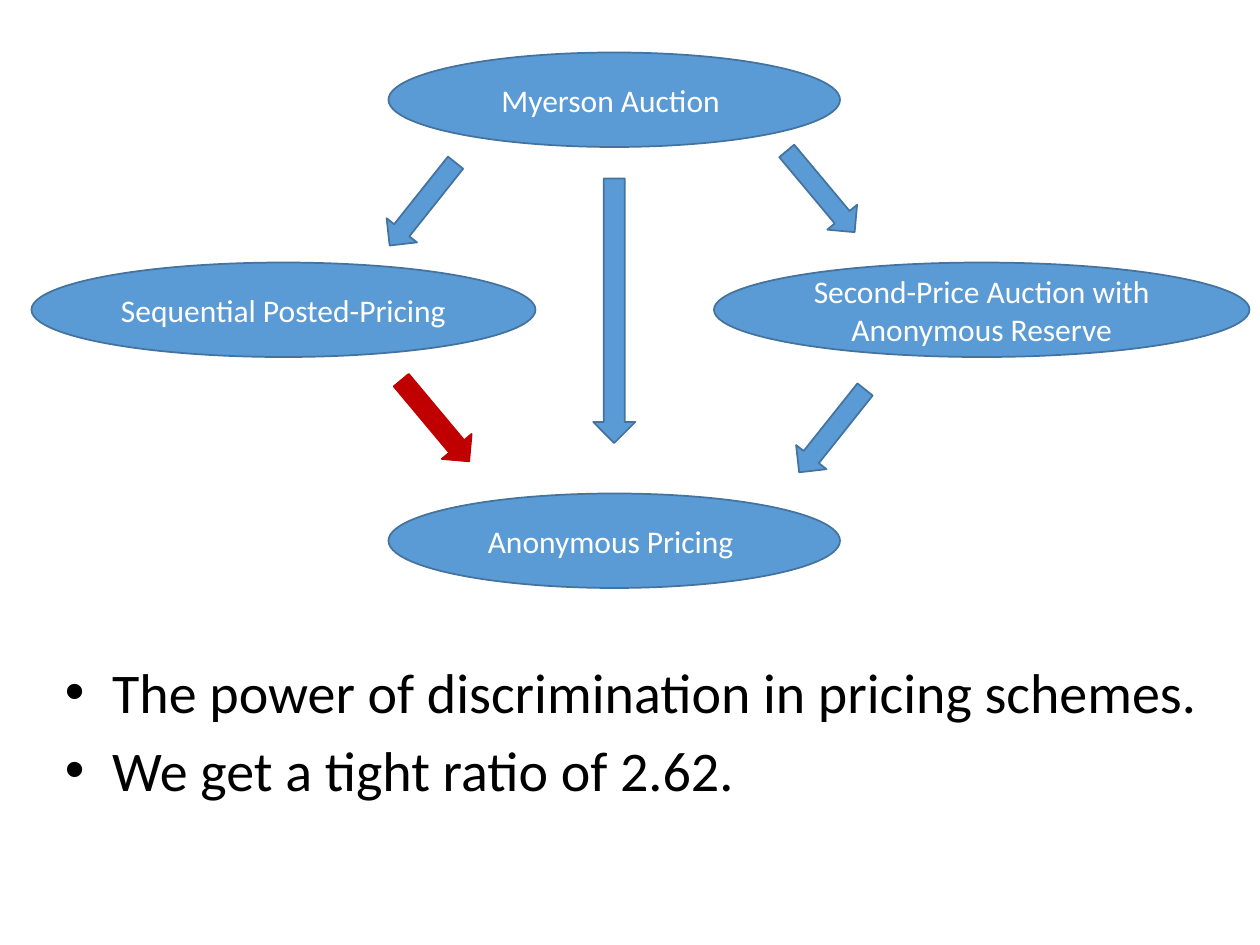
from lxml import etree
from pptx import Presentation
from pptx.dml.color import RGBColor
from pptx.enum.shapes import MSO_SHAPE
from pptx.enum.text import MSO_ANCHOR, PP_ALIGN
from pptx.oxml.ns import qn
from pptx.util import Pt

OVAL, DOWN_ARROW = MSO_SHAPE.OVAL, MSO_SHAPE.DOWN_ARROW
MIDDLE, CENTER = MSO_ANCHOR.MIDDLE, PP_ALIGN.CENTER

BLUE, DARK_BLUE, RED = "5B9BD5", "43739E", "C00000"
WHITE, BLACK = "FFFFFF", "000000"
LEFT_TURN, RIGHT_TURN = 38.5, 320.1

# Text, left, top, width; a trailing space shifts the centred text.
MECHANISMS = [
    ("Myerson Auction ", 222, 30, 258),
    ("Anonymous Pricing ", 222, 282, 258),
    ("Sequential Posted-Pricing", 18, 150, 288),
    ("Second-Price Auction with Anonymous Reserve", 408, 150, 306),
]
MECHANISM_HEIGHT = 54

# Left, top, rotation, fill, line
SHORT_ARROWS = [
    (230.4, 86.4, LEFT_TURN, BLUE, DARK_BLUE),
    (464.4, 216, LEFT_TURN, BLUE, DARK_BLUE),
    (237.6, 210.2, RIGHT_TURN, RED, RED),
    (457.9, 79.2, RIGHT_TURN, BLUE, DARK_BLUE),
]
SHORT_ARROW_SIZE = (22.2, 60.5)

CONCLUSIONS = [
    "The power of discrimination in pricing schemes.",
    "We get a tight ratio of 2.62.",
]


def color(hex_string):
    return RGBColor.from_string(hex_string)


def set_attributes(target, values):
    for name, value in values.items():
        setattr(target, name, value)


def set_font(run, size, hex_string):
    set_attributes(run.font, {"name": "Calibri", "size": Pt(size)})
    run.font.color.rgb = color(hex_string)


def add_outlined_shape(slide, kind, box, fill, line):
    shape = slide.shapes.add_shape(kind, *map(Pt, box))
    shape.shadow.inherit = False
    shape.fill.solid()
    shape.fill.fore_color.rgb = color(fill)
    shape.line.color.rgb = color(line)
    shape.line.width = Pt(1)
    return shape


def add_mechanism(slide, text, box):
    ellipse = add_outlined_shape(slide, OVAL, box, BLUE, DARK_BLUE)
    frame = ellipse.text_frame
    set_attributes(frame, {"word_wrap": True, "vertical_anchor": MIDDLE})
    paragraph = frame.paragraphs[0]
    paragraph.alignment = CENTER
    run = paragraph.add_run()
    run.text = text
    set_font(run, 18, WHITE)


def add_diagram(slide, left, top):
    """Place the mechanisms and the arrows between them, offset from left, top."""
    for text, x, y, width in MECHANISMS:
        add_mechanism(slide, text, (left + x, top + y, width, MECHANISM_HEIGHT))
    add_outlined_shape(slide, DOWN_ARROW, (left + 339, top + 102, 24, 151.2),
                       BLUE, DARK_BLUE)
    for x, y, rotation, fill, line in SHORT_ARROWS:
        box = (left + x, top + y, *SHORT_ARROW_SIZE)
        arrow = add_outlined_shape(slide, DOWN_ARROW, box, fill, line)
        arrow.rotation = rotation


def add_bullet(paragraph, indent):
    properties = paragraph._p.get_or_add_pPr()
    properties.set("marL", str(Pt(indent)))
    properties.set("indent", str(-Pt(indent)))
    etree.SubElement(properties, qn("a:buFont"), typeface="Arial")
    etree.SubElement(properties, qn("a:buChar"), char="•")


def add_conclusions(slide, box):
    frame = slide.shapes.add_textbox(*map(Pt, box)).text_frame
    frame.word_wrap = True
    for index, text in enumerate(CONCLUSIONS):
        paragraph = frame.add_paragraph() if index else frame.paragraphs[0]
        paragraph.space_before = Pt(6.4)
        add_bullet(paragraph, 27)
        run = paragraph.add_run()
        run.text = text
        set_font(run, 32, BLACK)


def main():
    presentation = Presentation()
    set_attributes(presentation, {"slide_width": Pt(720), "slide_height": Pt(540)})
    slide = presentation.slides.add_slide(presentation.slide_layouts[6])
    add_diagram(slide, 0, 0)
    add_conclusions(slide, (30, 372, 666, 93))
    presentation.save("out.pptx")


if __name__ == "__main__":
    main()
